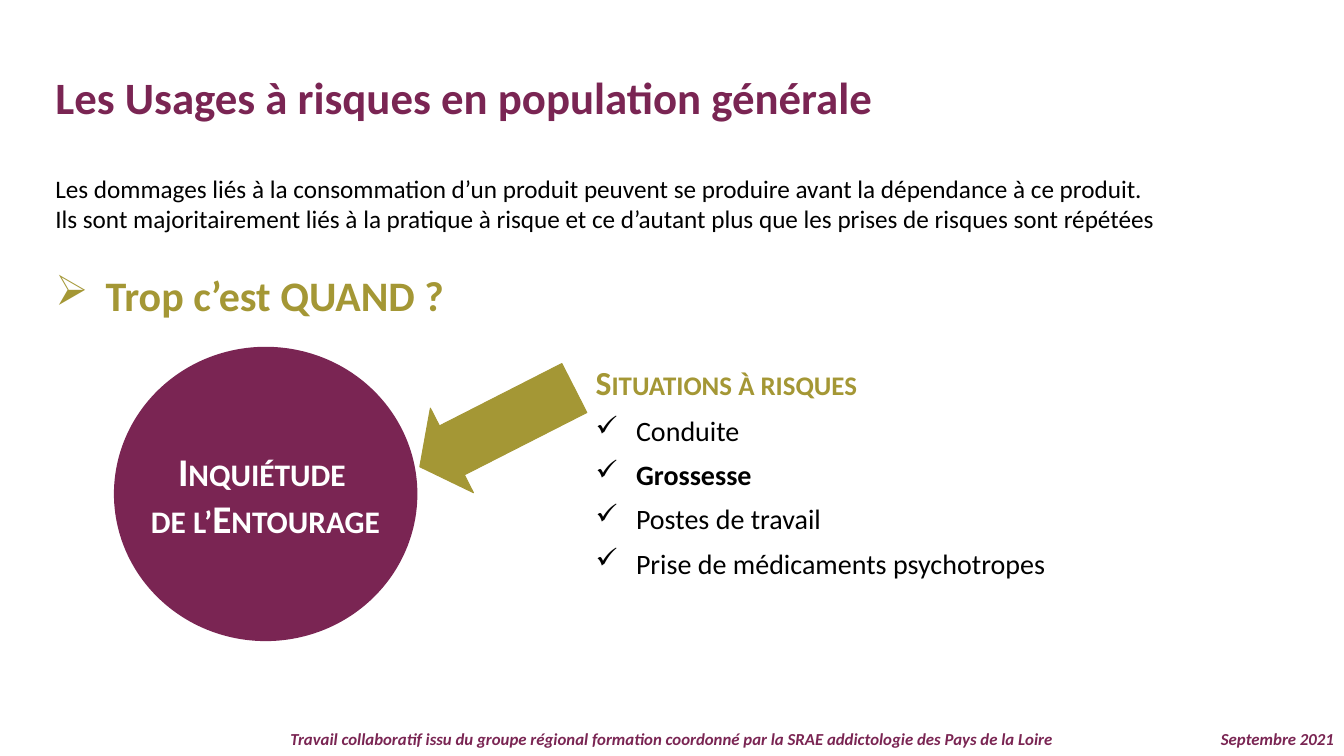
from dataclasses import dataclass

from lxml import etree
from pptx import Presentation
from pptx import util as u
from pptx.dml.color import RGBColor
from pptx.enum import shapes, text
from pptx.oxml.ns import qn

PX = 9144  # 100 px to the inch


@dataclass(frozen=True)
class Theme:
    font: str = "Calibri"
    plum: str = "7A2553"
    olive: str = "A49735"
    black: str = "000000"
    white: str = "FFFFFF"
    title: int = 32
    question: int = 30
    circle: int = 28
    heading: int = 24
    item: int = 20
    body: int = 18
    footer: int = 12


THEME = Theme()
ALIGN = text.PP_ALIGN

INTRO = [
    "Les dommages liés à la consommation d’un produit peuvent se produire avant la dépendance à ce produit.",
    "Ils sont majoritairement liés à la pratique à risque et ce d’autant plus que les prises de risques sont répétées",
]
SITUATIONS = ["Conduite", "Grossesse", "Postes de travail", "Prise de médicaments psychotropes"]
FOOTER = "Travail collaboratif issu du groupe régional formation coordonné par la SRAE addictologie des Pays de la Loire"


def px(*lengths):
    return [u.Emu(length * PX) for length in lengths]


def style(paragraph, size, color, bold=False, italic=False, small_caps=False):
    for run in paragraph.runs:
        run.font.name = THEME.font
        run.font.size = u.Pt(size)
        run.font.color.rgb = RGBColor.from_string(color)
        run.font.bold = bold
        run.font.italic = italic
        if small_caps:
            run.font._element.set("cap", "small")


def add_bullet(paragraph, char, indent):
    properties = paragraph._p.get_or_add_pPr()
    properties.set("marL", str(indent * PX))
    properties.set("indent", str(-indent * PX))
    etree.SubElement(properties, qn("a:buChar")).set("char", char)


def add_text(slide, box, lines, align=ALIGN.LEFT, spacing=1.0, **look):
    frame = slide.shapes.add_textbox(*px(*box)).text_frame
    frame.word_wrap = True
    frame.text = "\n".join(lines)
    for paragraph in frame.paragraphs:
        paragraph.alignment = align
        paragraph.line_spacing = spacing
        style(paragraph, **look)
    return frame


def add_solid(slide, kind, box, color):
    solid = slide.shapes.add_shape(kind, *px(*box))
    solid.shadow.inherit = False
    solid.fill.solid()
    solid.fill.fore_color.rgb = RGBColor.from_string(color)
    solid.line.fill.background()
    return solid


def set_title(slide, box, wording):
    title = slide.shapes.title
    title.left, title.top, title.width, title.height = px(*box)
    frame = title.text_frame
    frame.text = wording
    frame.auto_size = text.MSO_AUTO_SIZE.NONE
    frame.vertical_anchor = text.MSO_ANCHOR.TOP
    frame.paragraphs[0].alignment = ALIGN.LEFT
    style(frame.paragraphs[0], THEME.title, THEME.plum, bold=True)


def add_situations(slide, box):
    frame = add_text(slide, box, ["Situations à risques"], spacing=0.9, size=THEME.heading,
                     color=THEME.olive, bold=True, small_caps=True)
    for situation in SITUATIONS:
        item = frame.add_paragraph()
        item.text = situation
        add_bullet(item, "✓", 40)
        item.line_spacing = 0.9
        item.space_before = u.Pt(10)
        style(item, THEME.item, THEME.black, bold=situation == "Grossesse")


def add_concern_circle(slide, box):
    circle = add_solid(slide, shapes.MSO_SHAPE.OVAL, box, THEME.plum)
    frame = circle.text_frame
    frame.word_wrap = False
    frame.vertical_anchor = text.MSO_ANCHOR.MIDDLE
    frame.text = "Inquiétude \vde l’Entourage"
    frame.paragraphs[0].alignment = ALIGN.CENTER
    style(frame.paragraphs[0], THEME.circle, THEME.white, bold=True, small_caps=True)


def add_arrow(slide, box):
    arrow = add_solid(slide, shapes.MSO_SHAPE.LEFT_ARROW, box, THEME.olive)
    arrow.line.color.rgb = RGBColor.from_string(THEME.olive)
    arrow.line.width = u.Pt(0.75)
    arrow.adjustments[0] = 0.58
    arrow.adjustments[1] = 0.38
    arrow.rotation = 333


def main():
    deck = Presentation()
    deck.slide_width, deck.slide_height = px(1333, 750)
    slide = deck.slides.add_slide(deck.slide_layouts.get_by_name("Title Only"))

    # Footer
    footer_look = dict(spacing=0.9, size=THEME.footer, color=THEME.plum, bold=True, italic=True)
    add_text(slide, (0, 720, 1333, 30), [FOOTER], ALIGN.CENTER, **footer_look)
    add_text(slide, (1124, 720, 209, 30), ["Septembre 2021"], ALIGN.RIGHT, **footer_look)

    # Title, introduction and question
    set_title(slide, (45, 64, 1297, 64), "Les Usages à risques en population générale")
    add_text(slide, (45, 167, 1297, 71), INTRO, size=THEME.body, color=THEME.black)
    question = add_text(slide, (45, 268, 1167, 66), ["Trop c’est QUAND ?"], size=THEME.question,
                        color=THEME.olive, bold=True)
    add_bullet(question.paragraphs[0], "➢", 50)
    question.paragraphs[0].line_spacing = 0.9

    # Risk situations leading to concern
    add_situations(slide, (581, 359, 608, 277))
    add_concern_circle(slide, (113, 344, 301, 292))
    add_arrow(slide, (407, 377, 172, 94))

    deck.save("out.pptx")


if __name__ == "__main__":
    main()
